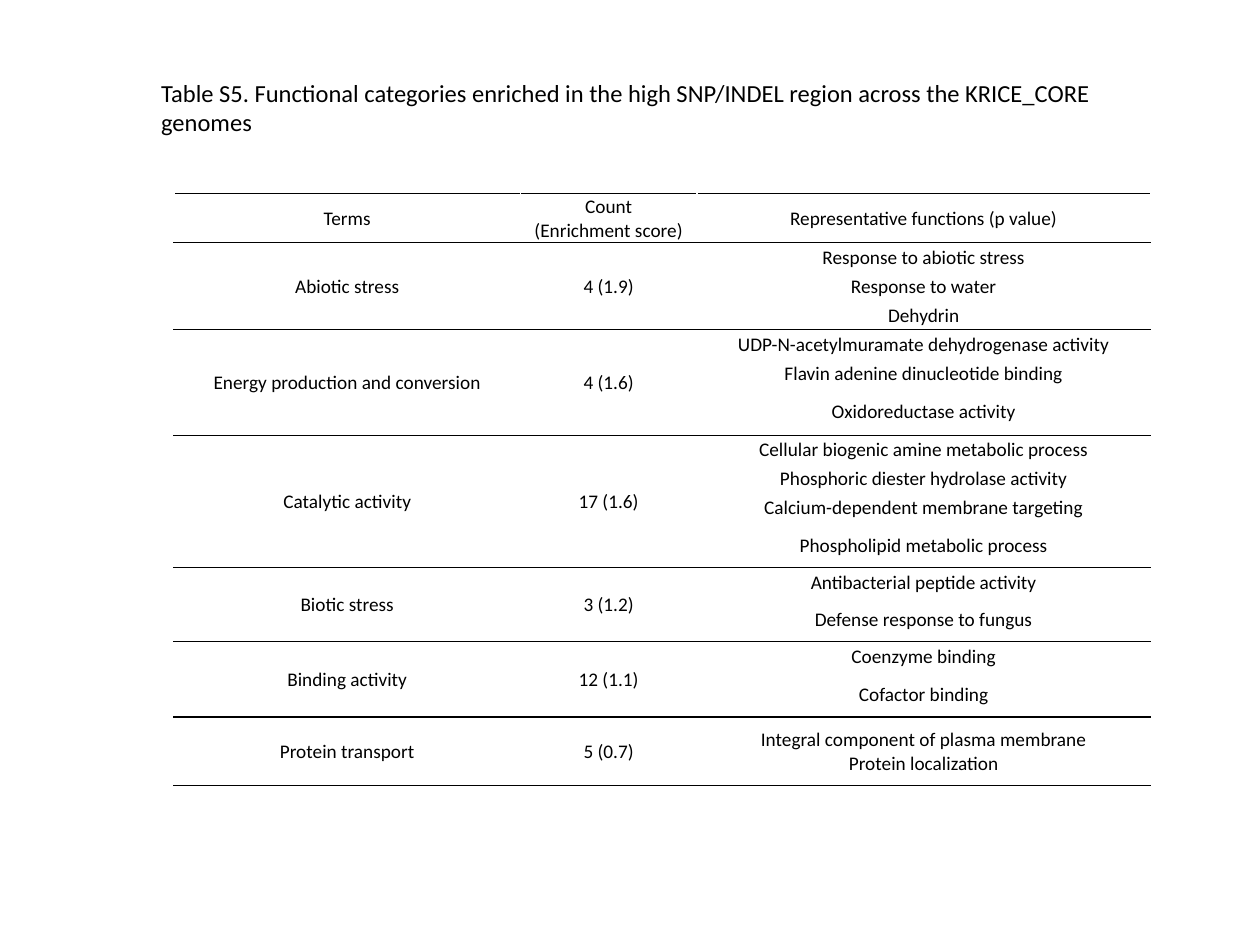
from pptx import Presentation
from pptx.dml.color import RGBColor
from pptx.enum.text import MSO_ANCHOR, PP_ALIGN
from pptx.oxml import parse_xml
from pptx.oxml.ns import nsdecls
from pptx.util import Pt

COLORS = {"ink": "000000", "paper": "FFFFFF"}
TITLE = ("Table S5. Functional categories enriched in the high SNP/INDEL region "
         "across the KRICE_CORE genomes")
ROW = 16.56
# term, count, [(representative function, row height)]
GROUPS = [
    ("Terms", "Count\n(Enrichment score)",
     [("Representative functions (p value)", 23)]),
    ("Abiotic stress", "4 (1.9)",
     [("Response to abiotic stress", ROW), ("Response to water", ROW), ("Dehydrin", ROW)]),
    ("Energy production and conversion", "4 (1.6)",
     [("UDP-N-acetylmuramate dehydrogenase activity", ROW),
      ("Flavin adenine dinucleotide binding", ROW),
      ("Oxidoreductase activity", 27.4)]),
    ("Catalytic activity", "17 (1.6)",
     [("Cellular biogenic amine metabolic process", ROW),
      ("Phosphoric diester hydrolase activity", ROW),
      ("Calcium-dependent membrane targeting", ROW),
      ("Phospholipid metabolic process", 25.9)]),
    ("Biotic stress", "3 (1.2)",
     [("Antibacterial peptide activity", ROW), ("Defense response to fungus", 25.9)]),
    ("Binding activity", "12 (1.1)",
     [("Coenzyme binding", ROW), ("Cofactor binding", 26.6)]),
    ("Protein transport", "5 (0.7)",
     [("Integral component of plasma membrane\nProtein localization", 38.9)]),
]
COLUMNS = [198, 100.8, 259.2]
CELL = {"vertical_anchor": MSO_ANCHOR.MIDDLE, "margin_left": Pt(0.7),
        "margin_right": Pt(0.7), "margin_top": Pt(0.7), "margin_bottom": Pt(0)}


def style_font(p, size):
    for name, value in {"name": "Calibri", "size": Pt(size)}.items():
        setattr(p.font, name, value)
    p.font.color.rgb = RGBColor.from_string(COLORS["ink"])


def format_cell(cell, text, top, bottom):
    cell.text_frame.text = text
    for p in cell.text_frame.paragraphs:
        p.alignment = PP_ALIGN.CENTER
        style_font(p, 11)
    for name, value in CELL.items():
        setattr(cell, name, value)
    tc_pr = cell._tc.get_or_add_tcPr()
    edges = {"lnL": "paper", "lnR": "paper", "lnT": top, "lnB": bottom}
    for tag, color in edges.items():
        tc_pr.append(parse_xml(
            f'<a:{tag} {nsdecls("a")} w="12700"><a:solidFill>'
            f'<a:srgbClr val="{COLORS[color]}"/></a:solidFill></a:{tag}>'))
    cell.fill.solid()
    cell.fill.fore_color.rgb = RGBColor.from_string(COLORS["paper"])


prs = Presentation()
prs.slide_width, prs.slide_height = Pt(720), Pt(540)
s = prs.slides.add_slide(prs.slide_layouts[6])

heights = [height for group in GROUPS for _, height in group[2]]
table = s.shapes.add_table(len(heights), len(COLUMNS), Pt(99.4), Pt(110.7),
                           Pt(sum(COLUMNS)), Pt(sum(heights))).table
table.first_row = table.horz_banding = False
for column, width in zip(table.columns, COLUMNS):
    column.width = Pt(width)
for row, height in zip(table.rows, heights):
    row.height = Pt(height)

first = 0
for term, count, functions in GROUPS:
    last = first + len(functions) - 1
    for i, (function, _) in enumerate(functions, first):
        for col, label in enumerate((term, count)):
            format_cell(table.cell(i, col), label if i == first else "", "ink", "ink")
        format_cell(table.cell(i, 2), function,
                    "ink" if i == first else "paper", "ink" if i == last else "paper")
    if last > first:
        for col in (0, 1):
            table.cell(first, col).merge(table.cell(last, col))
    first = last + 1

tf = s.shapes.add_textbox(Pt(85), Pt(41), Pt(584), Pt(41)).text_frame
tf.word_wrap = True
tf.text = TITLE
style_font(tf.paragraphs[0], 14)

prs.save("out.pptx")
